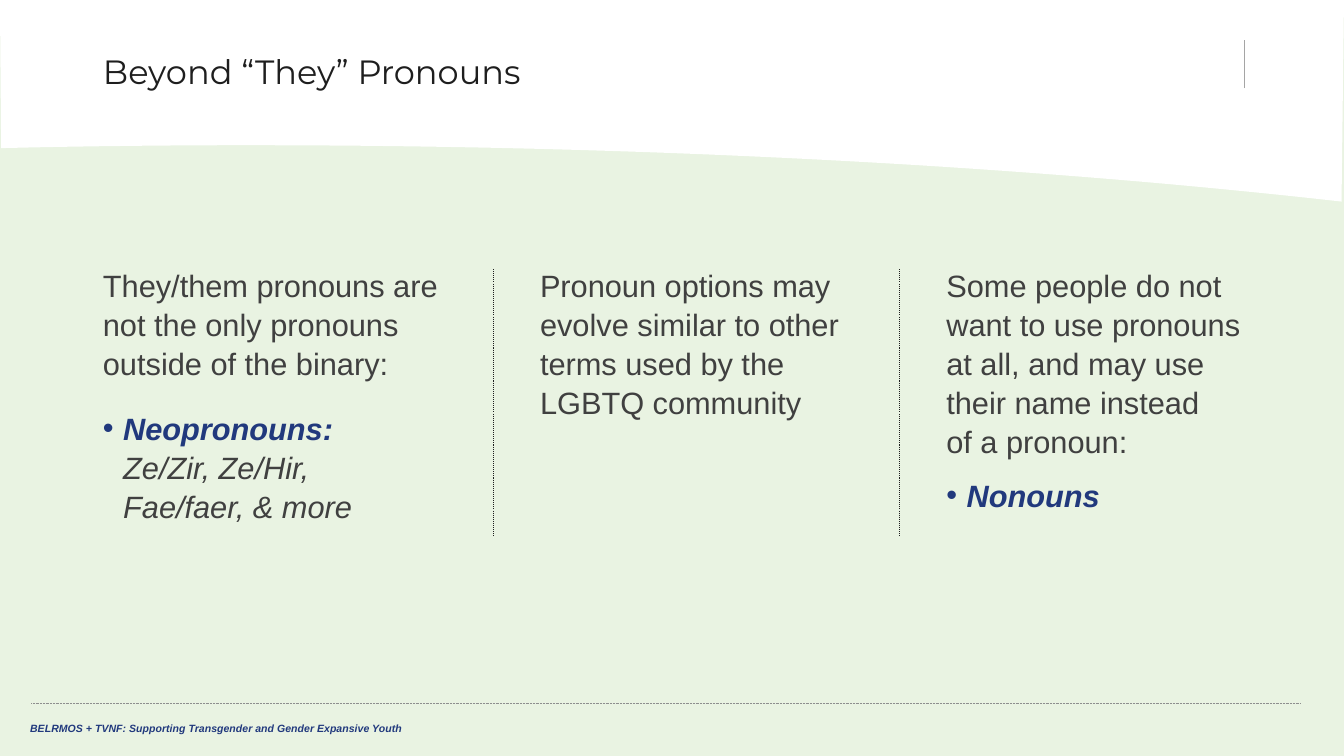
from lxml import etree
from pptx import Presentation
from pptx import util as u
from pptx.dml.color import RGBColor
from pptx.enum import dml, shapes, text
from pptx.oxml import ns

Cm, Pt = u.Cm, u.Pt
COLORS = {"mint": "E9F3E2", "white": "FFFFFF", "ink": "1E1E1E", "body": "404040",
          "navy": "21397D", "rule": "8E8E8E", "tick": "A5A5A5"}
WIDTH, HEIGHT = 33.87, 19.05
COLUMN_TOP = 6.53
COLUMN_WIDTH = 9.09

OPTIONS = [
    (2.34, 7.37, "They/them pronouns are not the only pronouns outside of the binary:",
     18, "Neopronouns:", "Ze/Zir, Ze/Hir,\nFae/faer, & more"),
    (13.36, 11.61, "Pronoun options may evolve similar to other terms used by the "
     "LGBTQ community", 0, "", ""),
    (23.6, 11.61, "Some people do not want to use pronouns\nat all, and may use\n"
     "their name instead\nof a pronoun:", 10, "Nonouns", ""),
]


def color(name):
    return RGBColor.from_string(COLORS[name])


def write(paragraph, words, size=22, font="Arial", ink="body", bold=False, italic=False):
    """Add words to a paragraph, with a line break at each newline."""
    for index, line in enumerate(words.split("\n")):
        if index:
            paragraph.add_line_break()
        if not line:
            continue
        run = paragraph.add_run()
        run.text = line
        run.font.size, run.font.name = Pt(size), font
        run.font.bold, run.font.italic = bold, italic
        run.font.color.rgb = color(ink)


def set_bullet(paragraph, mark=None):
    properties = paragraph._p.get_or_add_pPr()
    indent = Cm(0.51) if mark else 0
    properties.set("marL", str(indent))
    properties.set("indent", str(-indent))
    if mark:
        font = etree.SubElement(properties, ns.qn("a:buFont"))
        font.set("typeface", "Arial")
        etree.SubElement(properties, ns.qn("a:buChar")).set("char", mark)
    else:
        etree.SubElement(properties, ns.qn("a:buNone"))


def place(shape, left, top, width, height):
    shape.left, shape.top, shape.width, shape.height = map(Cm, (left, top, width, height))
    frame = shape.text_frame
    frame.word_wrap = True
    frame.auto_size = text.MSO_AUTO_SIZE.NONE
    return frame


def add_rule(slide, start, end, ink, weight, dotted=True):
    rule = slide.shapes.add_connector(
        shapes.MSO_CONNECTOR.STRAIGHT, *map(Cm, (*start, *end)))
    rule.line.color.rgb = color(ink)
    rule.line.width = Pt(weight)
    if dotted:
        rule.line.dash_style = dml.MSO_LINE.ROUND_DOT
    etree.SubElement(rule._element.spPr, ns.qn("a:effectLst"))


def add_header_band(slide, width, height, steps=60):
    """Draw the white band, whose lower edge is a cubic curve."""
    curve = [(width - 0.06, height), (19.35, 0.68 * height),
             (5.26, 0.71 * height), (0.03, 0.735 * height)]
    edge = []
    for step in range(steps + 1):
        t = step / steps
        weights = ((1 - t) ** 3, 3 * t * (1 - t) ** 2, 3 * t * t * (1 - t), t ** 3)
        edge.append(tuple(Cm(sum(w * point[axis] for w, point in zip(weights, curve)))
                          for axis in (0, 1)))
    outline = slide.shapes.build_freeform(0, 0)
    outline.add_line_segments([(Cm(width), 0), *edge], close=True)
    band = outline.convert_to_shape()
    band.fill.solid()
    band.fill.fore_color.rgb = color("white")
    band.line.fill.background()
    band.shadow.inherit = False


def add_title(slide, left, top, width, height):
    frame = place(slide.shapes.title, left, top, width, height)
    frame.vertical_anchor = text.MSO_ANCHOR.MIDDLE
    heading = frame.paragraphs[0]
    heading.alignment = text.PP_ALIGN.LEFT
    heading.line_spacing = 0.9
    write(heading, "Beyond “They” Pronouns", size=24, font="Montserrat", ink="ink")


def add_column(shape, box, statement, gap, term, examples):
    frame = place(shape, *box)
    frame.vertical_anchor = text.MSO_ANCHOR.TOP
    intro = frame.paragraphs[0]
    set_bullet(intro)
    intro.line_spacing, intro.space_before = Pt(28), Pt(0)
    write(intro, statement)
    if term:
        item = frame.add_paragraph()
        item.level = 1
        set_bullet(item, "•")
        item.line_spacing, item.space_before = Pt(28), Pt(gap)
        write(item, term, ink="navy", bold=True, italic=True)
        if examples:
            write(item, "\n" + examples, italic=True)


def add_footer(slide, left, top, width, height):
    add_rule(slide, (left, top), (left + width, top), "rule", 0.5)
    credit = slide.shapes.add_textbox(0, 0, 0, 0)
    frame = place(credit, left - 0.28, top + 0.33, 17.07, height)
    write(frame.paragraphs[0],
          "BELRMOS + TVNF: Supporting Transgender and Gender Expansive Youth",
          size=7.5, ink="navy", bold=True, italic=True)


def add_pronoun_slide(deck):
    slide = deck.slides.add_slide(deck.slide_layouts[1])
    slide.background.fill.solid()
    slide.background.fill.fore_color.rgb = color("mint")
    add_header_band(slide, WIDTH, 5.08)
    add_footer(slide, 0.79, 17.73, 32, 0.58)
    add_rule(slide, (31.35, 2.22), (31.35, 1), "tick", 0.5, dotted=False)
    add_title(slide, 2.34, 0, 29.21, 3.7)
    # Send the band and rules behind the title and body
    tree = slide.shapes._spTree
    for holder in list(slide.placeholders):
        tree.append(holder._element)
    for index, (left, height, *content) in enumerate(OPTIONS):
        column = (slide.shapes.add_textbox(0, 0, 0, 0) if index
                  else slide.placeholders[1])
        add_column(column, (left, COLUMN_TOP, COLUMN_WIDTH, height), *content)
        if index:
            divider = left - 0.93
            add_rule(slide, (divider, COLUMN_TOP + 0.25),
                     (divider, COLUMN_TOP + 6.96), "ink", 0.75)


def main():
    deck = Presentation()
    deck.slide_width, deck.slide_height = Cm(WIDTH), Cm(HEIGHT)
    add_pronoun_slide(deck)
    deck.save("out.pptx")


if __name__ == "__main__":
    main()
